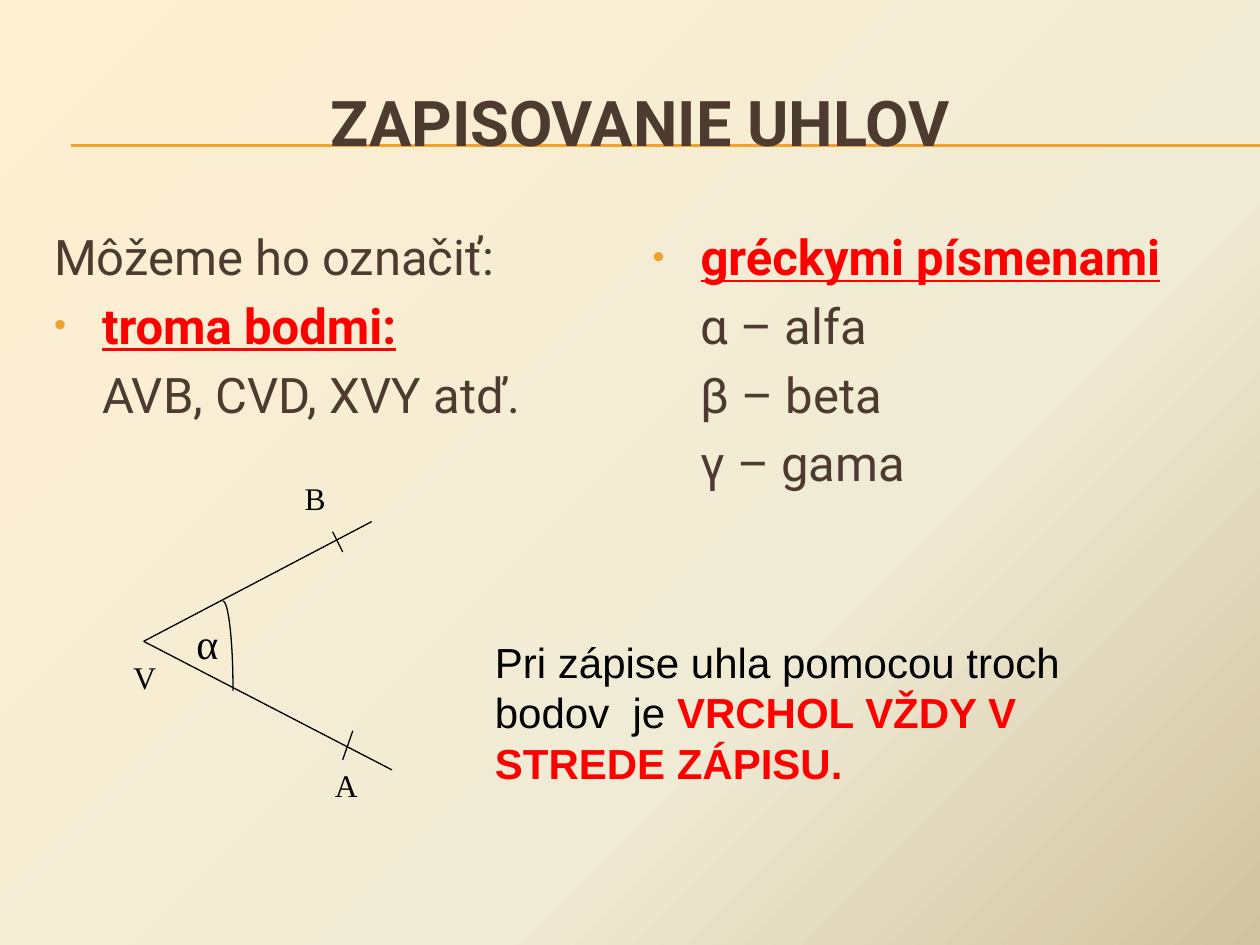
from copy import deepcopy

from pptx import Presentation
from pptx import util as u
from pptx.dml.color import RGBColor
from pptx.enum import shapes, text
from pptx.oxml import ns, xmlchemy

BROWN = RGBColor(0x4E, 0x3B, 0x30)
ORANGE = RGBColor(0xF0, 0xA2, 0x2E)
RED = RGBColor(0xFF, 0x00, 0x00)
BLACK = RGBColor(0x00, 0x00, 0x00)
BACKGROUND = [
    (0, RGBColor(0xFF, 0xEF, 0xD1)),
    (0.65, RGBColor(0xF0, 0xEB, 0xD5)),
    (1, RGBColor(0xD1, 0xC3, 0x9F)),
]


class AngleSlide:
    heading_font = "Roboto"
    label_font = "Times New Roman"
    note_font = "Arial"
    line_width = u.Pt(0.75)
    indent = u.Inches(0.38)

    def __init__(self, presentation):
        self.slide = presentation.slides.add_slide(presentation.slide_layouts[3])
        self.shapes = self.slide.shapes

    def place(self, shape, left, top, width, height):
        shape.left, shape.top = u.Inches(left), u.Inches(top)
        shape.width, shape.height = u.Inches(width), u.Inches(height)

    def format_run(self, run, font, size, color, bold=False, underline=False):
        run.font.name = font
        run.font.size = u.Pt(size)
        run.font.color.rgb = color
        run.font.bold = bold
        run.font.underline = underline

    def background(self, stops):
        fill = self.slide.background.fill
        fill.gradient()
        fill.gradient_angle = 315
        stop_list = next(self.slide.element.iter(ns.qn("a:gsLst")))
        stop_list.append(deepcopy(stop_list[-1]))
        for stop, (position, color) in zip(fill.gradient_stops, stops):
            stop.position = position
            stop.color.rgb = color

    def title(self, words, *box):
        shape = self.shapes.title
        self.place(shape, *box)
        frame = shape.text_frame
        frame.text = words
        frame.vertical_anchor = text.MSO_ANCHOR.MIDDLE
        paragraph = frame.paragraphs[0]
        paragraph.alignment = text.PP_ALIGN.CENTER
        self.format_run(paragraph.runs[0], self.heading_font, 36, BROWN, bold=True)

    def set_bullet(self, properties, shown):
        if not shown:
            xmlchemy.OxmlElement("a:buNone")
            properties.append(xmlchemy.OxmlElement("a:buNone"))
            return
        color = xmlchemy.OxmlElement("a:buClr")
        value = xmlchemy.OxmlElement("a:srgbClr")
        value.set("val", str(ORANGE))
        color.append(value)
        properties.append(color)
        for tag, name, setting in (
            ("a:buSzPct", "val", "70000"),
            ("a:buFont", "typeface", self.note_font),
            ("a:buChar", "char", "•"),
        ):
            element = xmlchemy.OxmlElement(tag)
            element.set(name, setting)
            properties.append(element)

    def body(self, index, lines, *box):
        shape = self.slide.placeholders[index]
        self.place(shape, *box)
        frame = shape.text_frame
        frame.text = "\n".join(words for words, kind in lines)
        for paragraph, (words, kind) in zip(frame.paragraphs, lines):
            properties = paragraph._p.get_or_add_pPr()
            properties.set("marL", str(self.indent))
            properties.set("indent", str(0 if kind == "indented" else -self.indent))
            bullet = kind == "bullet"
            self.set_bullet(properties, bullet)
            self.format_run(paragraph.runs[0], self.heading_font, 28,
                            RED if bullet else BROWN, bullet, bullet)

    def line(self, start, end, color=BLACK):
        connector = self.shapes.add_connector(
            shapes.MSO_CONNECTOR.STRAIGHT, *map(u.Inches, start + end))
        connector.line.color.rgb = color
        connector.line.width = self.line_width
        connector.element.spPr.append(xmlchemy.OxmlElement("a:effectLst"))
        return connector

    def rule(self, top):
        connector = self.line((0.56, top), (10, top), ORANGE)
        self.shapes.title.element.addprevious(connector.element)

    def arc(self, *box):
        shape = self.shapes.add_shape(shapes.MSO_SHAPE.ARC, *map(u.Inches, box))
        shape.shadow.inherit = False
        shape.fill.background()
        shape.line.color.rgb = BLACK
        shape.line.width = self.line_width

    def text_box(self, parts, font, size, *box):
        frame = self.shapes.add_textbox(*map(u.Inches, box)).text_frame
        frame.word_wrap = True
        frame.auto_size = text.MSO_AUTO_SIZE.SHAPE_TO_FIT_TEXT
        for words, color, bold in parts:
            run = frame.paragraphs[0].add_run()
            run.text = words
            self.format_run(run, font, size, color, bold)

    def label(self, letter, size, *box):
        self.text_box([(letter, BLACK, False)], self.label_font, size, *box)


def main():
    presentation = Presentation()
    presentation.slide_width = u.Inches(10)
    presentation.slide_height = u.Inches(7.5)

    page = AngleSlide(presentation)
    page.background(BACKGROUND)
    for top in (1.15, 1.16):
        page.rule(top)
    page.title("ZAPISOVANIE UHLOV", 0.33, 0.5, 9.5, 0.92)
    page.body(1, [
        ("Môžeme ho označiť:", "plain"),
        ("troma bodmi:", "bullet"),
        ("AVB, CVD, XVY atď.", "indented"),
    ], 0.33, 1.75, 4.58, 5.17)
    page.body(2, [
        ("gréckymi písmenami", "bullet"),
        ("α – alfa", "indented"),
        ("β – beta", "indented"),
        ("γ – gama", "indented"),
    ], 5.08, 1.75, 4.75, 5.17)

    vertex = (1.14, 5.09)
    page.line(vertex, (2.95, 4.14))
    page.line(vertex, (3.11, 6.11))
    page.arc(1.69, 4.77, 0.16, 1.42)
    page.line((2.64, 4.22), (2.72, 4.38))
    page.line((2.8, 5.8), (2.72, 6.03))
    page.label("A", 18, 2.56, 6.03, 0.31, 0.4)
    page.label("B", 18, 2.32, 3.75, 0.36, 0.4)
    page.label("V", 18, 0.96, 5.17, 0.37, 0.4)
    page.label("α", 24, 1.46, 4.85, 0.32, 0.5)
    page.text_box([
        ("Pri zápise uhla pomocou troch bodov  je ", BLACK, False),
        ("VRCHOL VŽDY V STREDE ZÁPISU.", RED, True),
    ], page.note_font, 24, 3.83, 5, 5, 1.31)

    presentation.save("out.pptx")


if __name__ == "__main__":
    main()
